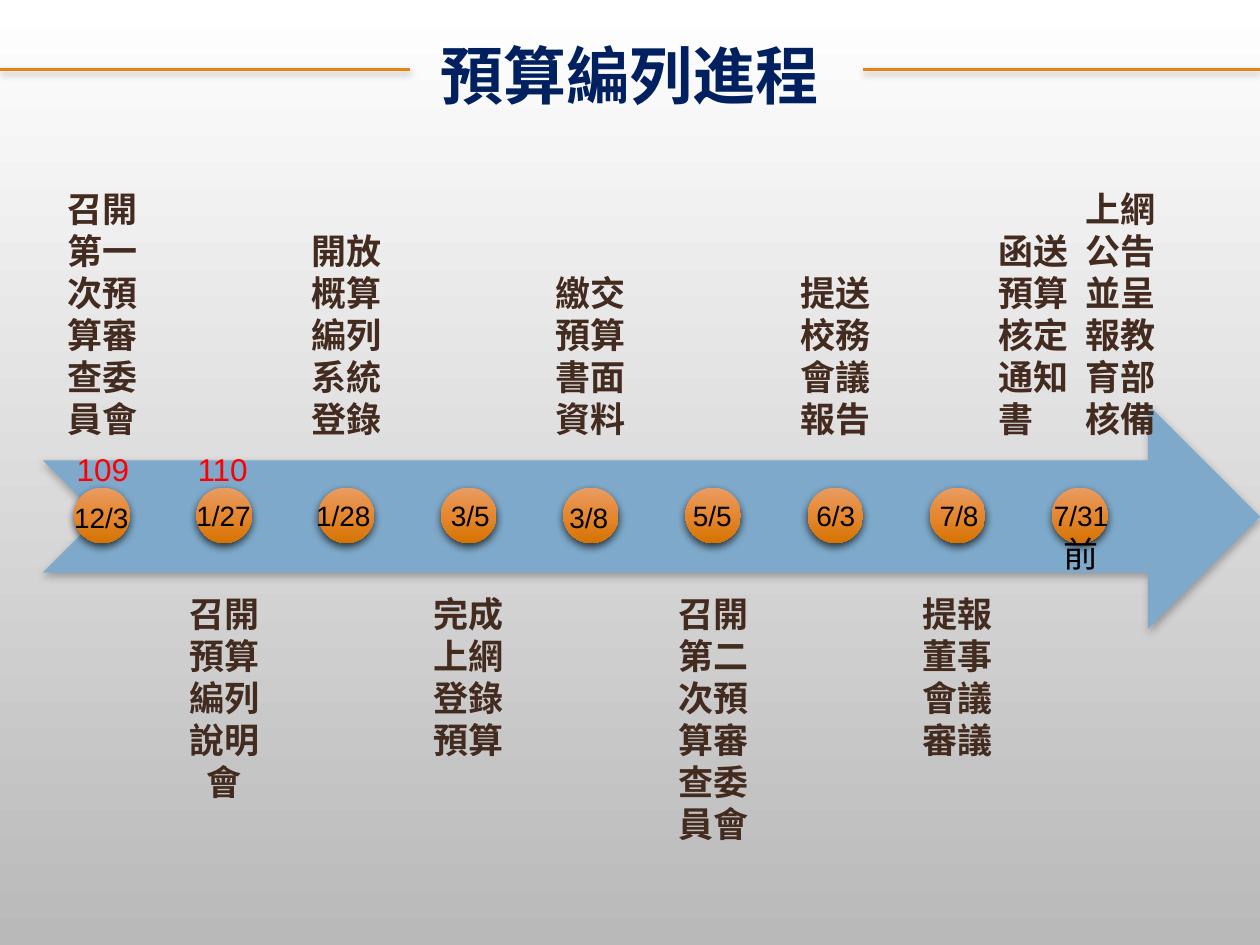
import copy
from dataclasses import dataclass
from typing import Optional

import pptx
import pptx.dml.color
import pptx.enum.shapes
import pptx.enum.text
import pptx.oxml
import pptx.oxml.ns
import pptx.util
from pptx.util import Inches, Pt

CJK = "Noto Sans CJK SC"
LATIN = "Arial"
BROWN = "432B20"
ORANGE = "E48312"
CENTER = pptx.enum.text.PP_ALIGN.CENTER
TOP = pptx.enum.text.MSO_ANCHOR.TOP
BOTTOM = pptx.enum.text.MSO_ANCHOR.BOTTOM

STEP = 0.97
FIRST_LABEL, FIRST_DOT = 0.35, 0.59
LABEL_WIDTH, LABEL_HEIGHT = 0.92, 1.78
ABOVE, BELOW = 1.87, 4.54
DOT_TOP, DOT_SIZE = 3.87, 0.44


@dataclass
class Milestone:
    task: str
    date: str
    date_left: float
    date_top: float = 3.91
    suffix: str = ""
    label_left: Optional[float] = None


@dataclass
class Style:
    size: float
    color: str
    font: str = LATIN
    bold: bool = False
    spacing: Optional[float] = None


MILESTONES = [
    Milestone("召開第一次預算審查委員會", "12/3", 0.49, 3.92),
    Milestone("召開預算編列說明會", "1/27", 1.46),
    Milestone("開放概算編列系統登錄", "1/28", 2.41),
    Milestone("完成上網登錄預算", "3/5", 3.48),
    Milestone("繳交預算書面資料", "3/8", 4.42, 3.92),
    Milestone("召開第二次預算審查委員會", "5/5", 5.4),
    Milestone("提送校務會議報告", "6/3", 6.38),
    Milestone("提報董事會議審議", "7/8", 7.36),
    Milestone("上網公告並呈報教育部核備", "7/31", 8.19, suffix="前", label_left=8.43),
]

TITLE = Style(36, "002060", CJK, True, 47)
TASK = Style(20, BROWN, CJK, True, 24)
DATE = Style(16, "000000")
SUFFIX = Style(20, "000000", CJK)
YEAR = Style(18, "FF0000")


def rgb(color: str) -> pptx.dml.color.RGBColor:
    return pptx.dml.color.RGBColor.from_string(color)


def set_gradient(fill, element, colors: list[str]) -> None:
    """Fill from top to bottom with evenly spaced colours; element holds the fill."""
    fill.gradient()
    fill.gradient_angle = 270
    stop_list = element.xpath(".//a:gsLst")[0]
    for _ in colors[2:]:
        stop_list.append(copy.deepcopy(stop_list[-1]))
    for index, (stop, color) in enumerate(zip(fill.gradient_stops, colors)):
        stop.position = index / (len(colors) - 1)
        stop.color.rgb = rgb(color)


def add_shadow(shape, opacity: int, blur: float) -> None:
    """Give the shape a soft shadow straight below it."""
    shape._element.spPr.append(pptx.oxml.parse_xml(
        f'<a:effectLst {pptx.oxml.ns.nsdecls("a")}>'
        f'<a:outerShdw blurRad="{Pt(blur)}" dist="{Pt(2)}" dir="5400000" rotWithShape="0">'
        f'<a:srgbClr val="000000"><a:alpha val="{opacity * 1000}"/></a:srgbClr>'
        '</a:outerShdw></a:effectLst>'))


def set_font(font, style: Style) -> None:
    font.size = Pt(style.size)
    font.bold = style.bold
    font.color.rgb = rgb(style.color)
    font.name = style.font


def add_text(page, text: str, left: float, top: float, width: float, height: float,
             style: Style, align=None, anchor=TOP, inset: Optional[float] = None):
    box = page.shapes.add_textbox(Inches(left), Inches(top), Inches(width), Inches(height))
    frame = box.text_frame
    frame.word_wrap = True
    frame.vertical_anchor = anchor
    if inset is not None:
        frame.margin_left = frame.margin_right = Inches(inset)
        frame.margin_top = frame.margin_bottom = Inches(inset)
    para = frame.paragraphs[0]
    para.alignment = align
    if style.spacing:
        para.line_spacing = Pt(style.spacing)
    span = para.add_run()
    span.text = text
    set_font(span.font, style)
    if style.font == CJK:
        set_east_asian(span)
    return para


def set_east_asian(span) -> None:
    """Use the CJK typeface for East Asian characters too."""
    latin = span.font._element.find(pptx.oxml.ns.qn("a:latin"))
    latin.addnext(pptx.oxml.parse_xml(
        f'<a:ea {pptx.oxml.ns.nsdecls("a")} typeface="{CJK}"/>'))


def add_rule(page, start: float, end: float) -> None:
    rule = page.shapes.add_connector(
        pptx.enum.shapes.MSO_CONNECTOR.STRAIGHT,
        Inches(start), Inches(0.55), Inches(end), Inches(0.55))
    rule.line.color.rgb = rgb(ORANGE)
    rule.line.width = Pt(1.75)
    add_shadow(rule, 28, 4)


def add_arrow(page) -> None:
    arrow = page.shapes.add_shape(
        pptx.enum.shapes.MSO_SHAPE.NOTCHED_RIGHT_ARROW,
        Inches(0.34), Inches(3.21), Inches(9.66), Inches(1.78))
    arrow.fill.solid()
    arrow.fill.fore_color.rgb = rgb("7EA9CA")
    arrow.line.fill.background()
    add_shadow(arrow, 28, 4)


def add_dot(page, left: float) -> None:
    dot = page.shapes.add_shape(
        pptx.enum.shapes.MSO_SHAPE.OVAL,
        Inches(left), Inches(DOT_TOP), Inches(DOT_SIZE), Inches(DOT_SIZE))
    set_gradient(dot.fill, dot._element, ["E99C62", "E58731", "D57300"])
    dot.line.fill.background()
    add_shadow(dot, 69, 5)


def add_milestone(page, index: int, milestone: Milestone) -> None:
    is_above = index % 2 == 0
    label_left = milestone.label_left or FIRST_LABEL + STEP * index
    add_text(page, milestone.task, label_left, ABOVE if is_above else BELOW,
             LABEL_WIDTH, LABEL_HEIGHT, TASK, CENTER, BOTTOM if is_above else TOP, 0.16)
    add_dot(page, FIRST_DOT + STEP * index)
    para = add_text(page, milestone.date, milestone.date_left, milestone.date_top,
                    0.78, 0.71 if milestone.suffix else 0.37, DATE,
                    CENTER if milestone.suffix else None)
    if milestone.suffix:
        span = para.add_run()
        span.text = milestone.suffix
        set_font(span.font, SUFFIX)
        set_east_asian(span)


def main() -> None:
    deck = pptx.Presentation()
    deck.slide_width, deck.slide_height = Inches(10), Inches(7.5)
    page = deck.slides.add_slide(deck.slide_layouts[6])
    set_gradient(page.background.fill, page.element, ["FFFFFF", "B9B9B9"])

    add_text(page, "預算編列進程", 3.4, 0.19, 3.35, 0.71, TITLE)
    add_rule(page, 0, 3.25)
    add_rule(page, 6.85, 10)

    add_arrow(page)
    for index, milestone in enumerate(MILESTONES):
        add_milestone(page, index, milestone)
    add_text(page, "109", 0.51, 3.52, 0.66, 0.4, YEAR)
    add_text(page, "110", 1.47, 3.52, 0.66, 0.4, YEAR)
    add_text(page, "函送預算核定通知書", 7.83, 1.77, 0.88, 1.85, TASK)

    deck.save("out.pptx")


if __name__ == "__main__":
    main()
